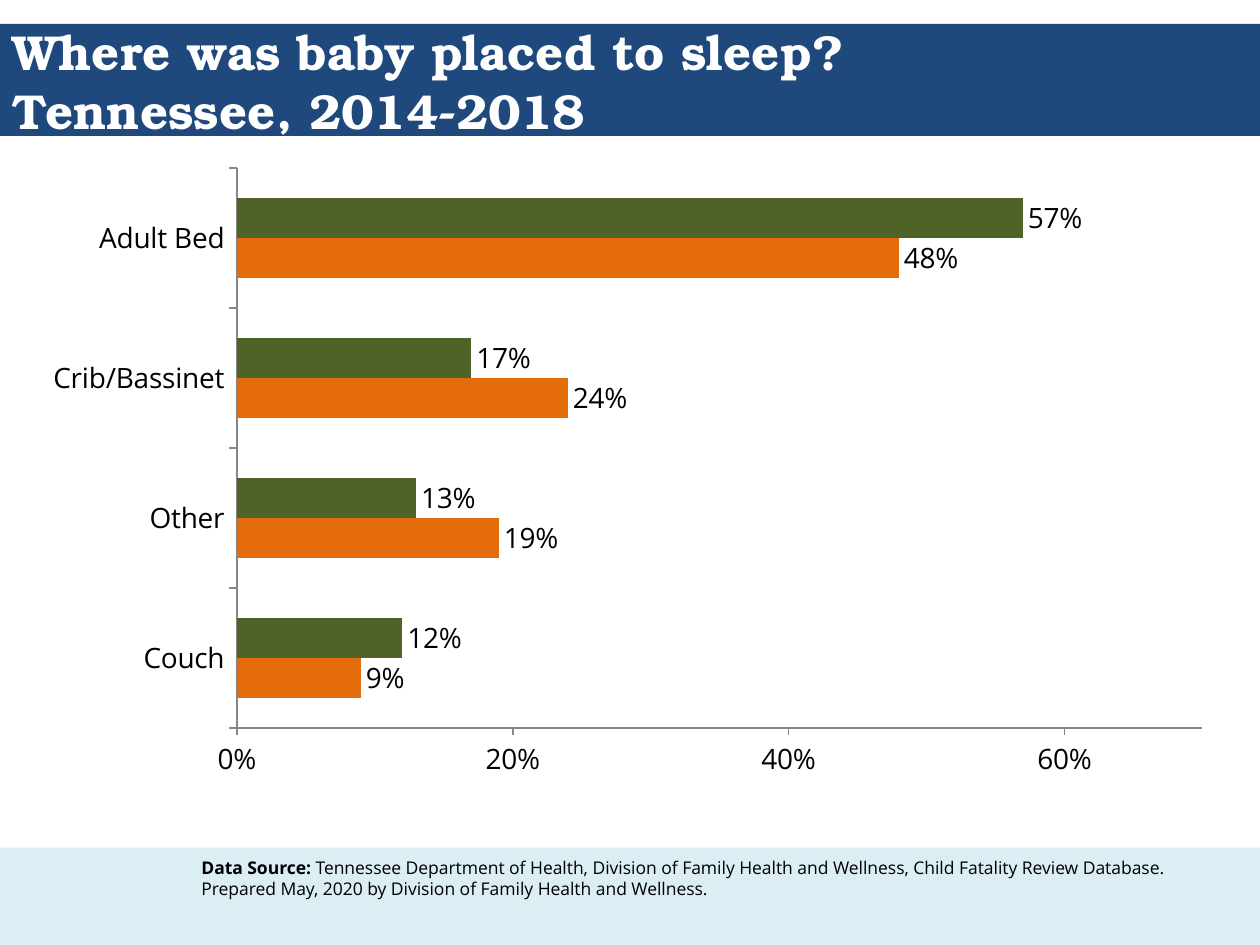
from lxml.etree import SubElement
from pptx import Presentation
from pptx.chart.data import CategoryChartData
from pptx.dml.color import RGBColor
from pptx.enum.chart import XL_CHART_TYPE, XL_LABEL_POSITION, XL_TICK_MARK
from pptx.enum.shapes import MSO_SHAPE
from pptx.enum.text import MSO_ANCHOR, MSO_AUTO_SIZE, PP_ALIGN
from pptx.oxml.ns import qn
from pptx.util import Cm, Pt

TITLE = "Where was baby placed to sleep?\vTennessee, 2014-2018"
SOURCE = [
    ("Data Source: ", True),
    ("Tennessee Department of Health, Division of Family Health and Wellness, "
     "Child Fatality Review Database. Prepared May, 2020 by Division of Family "
     "Health and Wellness.", False),
]
PLACES = ["Couch", "Other", "Crib/Bassinet", "Adult Bed"]
SERIES = [
    ([0.09, 0.19, 0.24, 0.48], "orange"),
    ([0.12, 0.13, 0.17, 0.57], "green"),
]

THEME = {
    "navy": "1F497D", "pale": "DBEEF4", "white": "FFFFFF", "black": "000000",
    "orange": "E46C0A", "green": "4F6228", "grey": "868686",
    "head": {"name": "TeX Gyre Bonum", "size": Pt(28), "bold": True},
    "note": {"name": "Open Sans", "size": Pt(10)},
    "chart": {"name": "Open Sans", "size": Pt(16), "bold": False},
}
WIDE, HIGH = 25.4, 19.05
BANDS = [(0.48, 2.26, "navy"), (17.09, HIGH - 17.09, "pale")]  # top, height, fill
BOXES = {
    "title": (0, 0.48, WIDE, 2.29),
    "note": (3.81, 17.15, 21.16, 1.88),
    "chart": (0.64, 2.97, 24.33, 13.77),
}
PLOT = {"x": 0.17, "y": 0.03, "w": 0.8, "h": 0.82}


def hue(key):
    return RGBColor.from_string(THEME[key])


def box(key):
    return [Cm(n) for n in BOXES[key]]


def put(item, **values):
    for key, value in values.items():
        setattr(item, key, value)


def style(font, key, color):
    put(font, **THEME[key])
    font.color.rgb = hue(color)


def add_bands(slide):
    """Draw the full-width bands behind everything else."""
    tree = slide.shapes.element
    for spot, (top, high, fill) in enumerate(BANDS, 2):
        band = slide.shapes.add_shape(
            MSO_SHAPE.RECTANGLE, 0, Cm(top), Cm(WIDE), Cm(high))
        band.shadow.inherit = False
        band.fill.solid()
        band.fill.fore_color.rgb = hue(fill)
        band.line.fill.background()
        tree.insert(spot, band.element)


def add_title(slide):
    title = slide.shapes.title
    put(title, **dict(zip(("left", "top", "width", "height"), box("title"))))
    frame = title.text_frame
    frame.text = TITLE
    put(frame, auto_size=MSO_AUTO_SIZE.NONE, vertical_anchor=MSO_ANCHOR.MIDDLE)
    para = frame.paragraphs[0]
    para.alignment = PP_ALIGN.LEFT
    for run in para.runs:
        style(run.font, "head", "white")


def add_note(slide):
    frame = slide.shapes.add_textbox(*box("note")).text_frame
    frame.word_wrap = True
    for text, bold in SOURCE:
        run = frame.paragraphs[0].add_run()
        run.text = text
        style(run.font, "note", "black")
        run.font.bold = bold


def fix_plot(chart):
    """Pin the inner plot area to set fractions of the chart."""
    area = chart.element.find(".//" + qn("c:plotArea"))
    old = area.find(qn("c:layout"))
    if old is not None:
        area.remove(old)
    layout = SubElement(area, qn("c:layout"))
    area.insert(0, layout)
    spot = SubElement(layout, qn("c:manualLayout"))
    rules = [("layoutTarget", "inner"), ("xMode", "edge"), ("yMode", "edge")]
    for key, value in rules + list(PLOT.items()):
        SubElement(spot, qn("c:" + key)).set("val", str(value))


def add_chart(slide):
    data = CategoryChartData(number_format="0%")
    data.categories = PLACES
    for values, _ in SERIES:
        data.add_series("", values)
    chart = slide.shapes.add_chart(
        XL_CHART_TYPE.BAR_CLUSTERED, *box("chart"), data).chart
    put(chart, has_legend=False, has_title=False)
    style(chart.font, "chart", "black")
    plot = chart.plots[0]
    put(plot, gap_width=150, overlap=0, vary_by_categories=False,
        has_data_labels=True)
    put(plot.data_labels, show_value=True, number_format="0%",
        number_format_is_linked=False, position=XL_LABEL_POSITION.OUTSIDE_END)
    style(plot.data_labels.font, "chart", "black")
    for bars, (_, fill) in zip(plot.series, SERIES):
        bars.invert_if_negative = False
        bars.format.fill.solid()
        bars.format.fill.fore_color.rgb = hue(fill)
    for axis in (chart.category_axis, chart.value_axis):
        put(axis, has_major_gridlines=False, major_tick_mark=XL_TICK_MARK.OUTSIDE,
            minor_tick_mark=XL_TICK_MARK.NONE)
        axis.format.line.color.rgb = hue("grey")
        axis.format.line.width = Pt(1)
        style(axis.tick_labels.font, "chart", "black")
    put(chart.value_axis, minimum_scale=0, maximum_scale=0.7, major_unit=0.2)
    put(chart.value_axis.tick_labels, number_format="0%",
        number_format_is_linked=False)
    fix_plot(chart)


def main():
    deck = Presentation()
    put(deck, slide_width=Cm(WIDE), slide_height=Cm(HIGH))
    slide = deck.slides.add_slide(deck.slide_layouts[5])
    add_bands(slide)
    add_title(slide)
    add_note(slide)
    add_chart(slide)
    deck.save("out.pptx")


if __name__ == "__main__":
    main()
